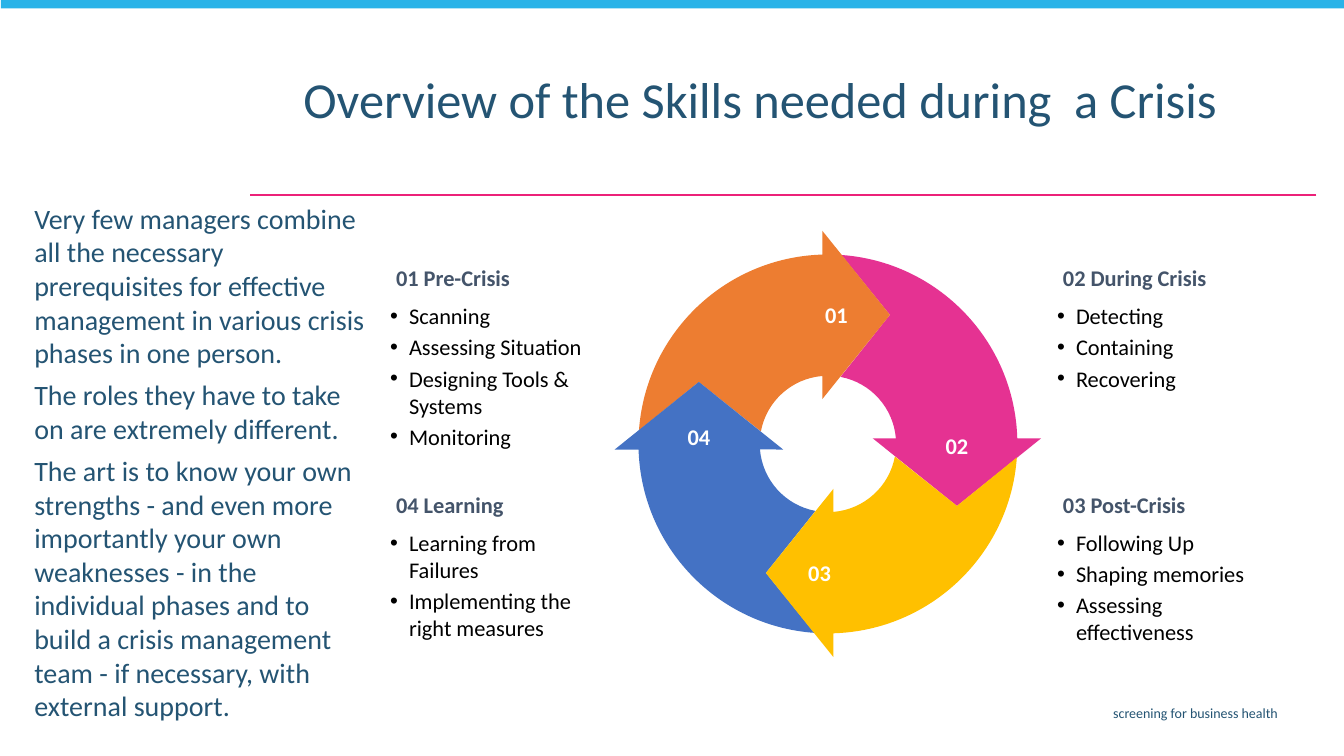
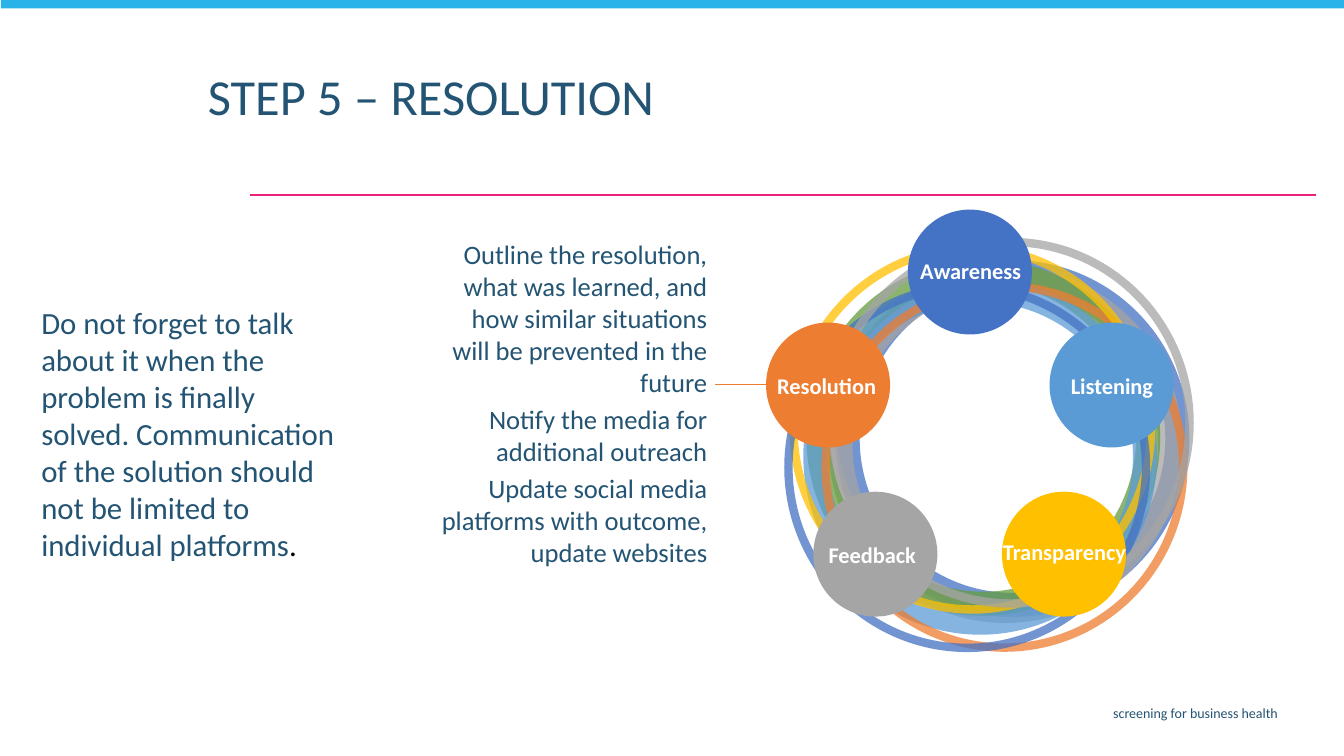
"""Build two slides on crisis skills and crisis resolution."""
from math import cos, sin, tan, radians

from lxml import etree
from pptx import Presentation
from pptx.dml import color as dml
from pptx.enum import shapes, text
from pptx.oxml import ns
from pptx.util import Pt

HUES = {
    "ink": "245473", "head": "44546A", "black": "000000", "white": "FFFFFF",
    "band": "29B3E8", "rule": "EC2179", "pink": "E53292", "orange": "ED7D31",
    "blue": "4472C4", "gold": "FFC000", "gray": "A5A5A5", "green": "659C40",
    "sky": "5B9BD5",
}
ALIGN = {"l": text.PP_ALIGN.LEFT, "c": text.PP_ALIGN.CENTER, "r": text.PP_ALIGN.RIGHT}
ANCHOR = {"t": text.MSO_ANCHOR.TOP, "m": text.MSO_ANCHOR.MIDDLE, "b": text.MSO_ANCHOR.BOTTOM}


def rgb(hue):
    return dml.RGBColor.from_string(HUES[hue])


def write(frame, paras, size=16, hue="ink", bold=False, align="l", anchor="t",
          pad=(7.2, 3.6), gap=0, lead=None, dots=False):
    frame.word_wrap = True
    frame.auto_size = text.MSO_AUTO_SIZE.NONE
    frame.vertical_anchor = ANCHOR[anchor]
    frame.margin_left = frame.margin_right = Pt(pad[0])
    frame.margin_top = frame.margin_bottom = Pt(pad[1])
    for i, para in enumerate(paras):
        p = frame.add_paragraph() if i else frame.paragraphs[0]
        if dots:
            prop = p._p.get_or_add_pPr()
            prop.set("marL", str(Pt(13.5)))
            prop.set("indent", str(-Pt(13.5)))
            etree.SubElement(prop, ns.qn("a:buFont")).set("typeface", "Arial")
            etree.SubElement(prop, ns.qn("a:buChar")).set("char", "•")
        p.alignment = ALIGN[align]
        p.space_before = Pt(gap if i else 0)
        if lead:
            p.line_spacing = lead
        for words, tint in [(para, hue)] if isinstance(para, str) else para:
            run = p.add_run()
            run.text = words
            run.font.name = "Calibri"
            run.font.size = Pt(size)
            run.font.bold = bold
            run.font.color.rgb = rgb(tint)


class Deck:
    """Holds the shared style and the current slide."""

    def __init__(self):
        self.file = Presentation()
        self.file.slide_width, self.file.slide_height = Pt(960), Pt(540)

    def start(self, title, x, y, lead=None):
        self.slide = self.file.slides.add_slide(self.file.slide_layouts[5])
        self.line(940.2, 178.5, 139, "rule", 1.5)
        self.shape("RECTANGLE", 0.7, 0, 959.3, 6, "band")
        self.text(["screening for business health"], 262.6, 499.7, 657.2, 21, size=10, align="r")
        head = self.slide.shapes.title
        head.left, head.top, head.width, head.height = map(Pt, (x, y, 700, 54.7))
        write(head.text_frame, [title], size=36, lead=lead)

    def text(self, paras, x, y, w, h, **style):
        box = self.slide.shapes.add_textbox(*map(Pt, (x, y, w, h)))
        write(box.text_frame, paras, **style)

    def label(self, words, x, y, w):
        self.text([words], x - w / 2, y - 13.5, w, 27,
                  hue="white", bold=True, align="c", anchor="m")

    def paint(self, item, hue):
        item.shadow.inherit = False
        item.fill.solid()
        item.fill.fore_color.rgb = rgb(hue)
        item.line.fill.background()

    def shape(self, kind, x, y, w, h, hue):
        item = self.slide.shapes.add_shape(
            getattr(shapes.MSO_SHAPE, kind), *map(Pt, (x, y, w, h)))
        self.paint(item, hue)
        return item

    def ring(self, x, y, w, h, band, hue):
        item = self.shape("DONUT", x, y, w, h, hue)
        item.adjustments[0] = band / w
        tint = item.fill._xPr.find(".//" + ns.qn("a:srgbClr"))
        etree.SubElement(tint, ns.qn("a:alpha")).set("val", "75000")

    def line(self, x, end, y, hue, width):
        item = self.slide.shapes.add_connector(
            shapes.MSO_CONNECTOR.STRAIGHT, Pt(x), Pt(y), Pt(end), Pt(y))
        item.line.color.rgb = rgb(hue)
        item.line.width = Pt(width)
        etree.SubElement(item._element.spPr, ns.qn("a:effectLst"))

    def outline(self, points, bends, hue):
        first, *rest = [(Pt(x), Pt(y)) for x, y in points]
        form = self.slide.shapes.build_freeform(*first, scale=1.0)
        form.add_line_segments(rest, close=True)
        item = form.convert_to_shape()
        self.paint(item, hue)
        steps = item._element.findall(".//" + ns.qn("a:lnTo"))
        for bend in bends:
            trio = steps[bend:bend + 3]
            curve = etree.Element(ns.qn("a:cubicBezTo"))
            trio[0].addprevious(curve)
            for step in trio:
                curve.append(step[0])
                step.getparent().remove(step)


def arc(radius, start, end):
    a, b = radians(start), radians(end)
    k = 4 / 3 * tan((b - a) / 4)
    return [(-radius * (cos(t) - m * sin(t)), -radius * (sin(t) + m * cos(t)))
            for t, m in ((a, 0), (a, k), (b, -k), (b, 0))]


def spin(points, turns, x, y):
    for _ in range(turns):
        points = [(-b, a) for a, b in points]
    return [(x + a, y + b) for a, b in points]


def skills(deck):
    deck.start("Overview of the Skills needed during  a Crisis", 209.5, 49.8, lead=0.9)
    deck.text([
        "Very few managers combine all the necessary prerequisites for effective "
        "management in various crisis phases in one person.",
        "The roles they have to take on are extremely different.",
        "The art is to know your own strengths - and even more importantly your own "
        "weaknesses - in the individual phases and to build a crisis management team - "
        "if necessary, with external support.",
    ], 18, 140.9, 251.3, 396, size=20, gap=6, pad=(6.5, 2.9))

    mid = (591.4, 317.1)
    arrow = (arc(135.3, 4.1, 88.3) + [(-4, -152.3), (44.3, -92.2), (-4, -32)]
             + arc(48.7, 85.3, 10.6) + [(-92.2, -44.3)])
    for turn, hue in ((1, "pink"), (0, "orange"), (3, "blue"), (2, "gold")):
        deck.outline(spin(arrow, turn, *mid), (0, 7), hue)
    for turn, shift in enumerate((6, 1, 6, 5.5)):
        [spot] = spin([(shift, -92.2)], turn, *mid)
        deck.label(f"0{turn + 1}", *spot, 44)

    left, right, upper, lower = 275.8, 752.2, 185, 347
    for x, y, head, items in (
        (right, upper, "02 During Crisis", ["Detecting", "Containing", "Recovering"]),
        (right, lower, "03 Post-Crisis",
         ["Following Up", "Shaping memories", "Assessing effectiveness"]),
        (left, upper, "01 Pre-Crisis",
         ["Scanning", "Assessing Situation", "Designing Tools & Systems", "Monitoring"]),
        (left, lower, "04 Learning",
         ["Learning from Failures", "Implementing the right measures"]),
    ):
        deck.text([head], x, y, 154, 26.6, hue="head", bold=True, anchor="b")
        deck.text(items, x, y + 29.6, 154, 112, hue="black", gap=3.1,
                  pad=(2.9, 1.4), dots=True)


def resolve(deck):
    deck.start("STEP 5 – RESOLUTION", 141.3, 43.2)
    deck.text([[
        ("Do not forget to talk about it when the problem is finally solved. "
         "Communication of the solution should not be limited to individual platforms", "ink"),
        (".", "black"),
    ]], 23, 214.1, 231.8, 193, size=22, pad=(6.5, 2.9))
    deck.text([
        "Outline the resolution, what was learned, and how similar situations will be "
        "prevented in the future",
        "Notify the media for additional outreach",
        "Update social media platforms with outcome, update websites",
    ], 308.7, 168.5, 199.4, 288, size=19, align="r", gap=3.8, pad=(2.9, 1.4))
    deck.line(551.5, 510.5, 274.7, "orange", 0.5)

    wide, thin = (252.7, 254.9, 17.2), (261.4, 264.2, 6)
    for x, y, size, hue in (
        (596.9, 185.8, wide, "blue"), (591.8, 190.1, wide, "gray"),
        (576, 185, wide, "green"), (573.8, 198.5, wide, "sky"),
        (586.8, 201.4, thin, "orange"), (563.8, 174.2, thin, "gold"),
        (560.2, 201.6, thin, "blue"), (591.3, 169.9, thin, "gray"),
    ):
        deck.ring(x, y, *size, hue)

    for x, y, hue, words, dx, dy in (
        (760, 395.8, "gold", "Transparency", 0.4, -1.6),
        (625.3, 395.8, "gray", "Feedback", -2.2, 0.4),
        (591.5, 275, "orange", "Resolution", -1, 0.5),
        (794, 275, "sky", "Listening", 0.3, 0.5),
        (692.8, 194.3, "blue", "Awareness", 0.6, -1),
    ):
        deck.shape("OVAL", x - 44.3, y - 44.6, 88.6, 89.2, hue)
        deck.label(words, x + dx, y + dy, 116)


def main():
    deck = Deck()
    skills(deck)
    resolve(deck)
    deck.file.save("out.pptx")


if __name__ == "__main__":
    main()
